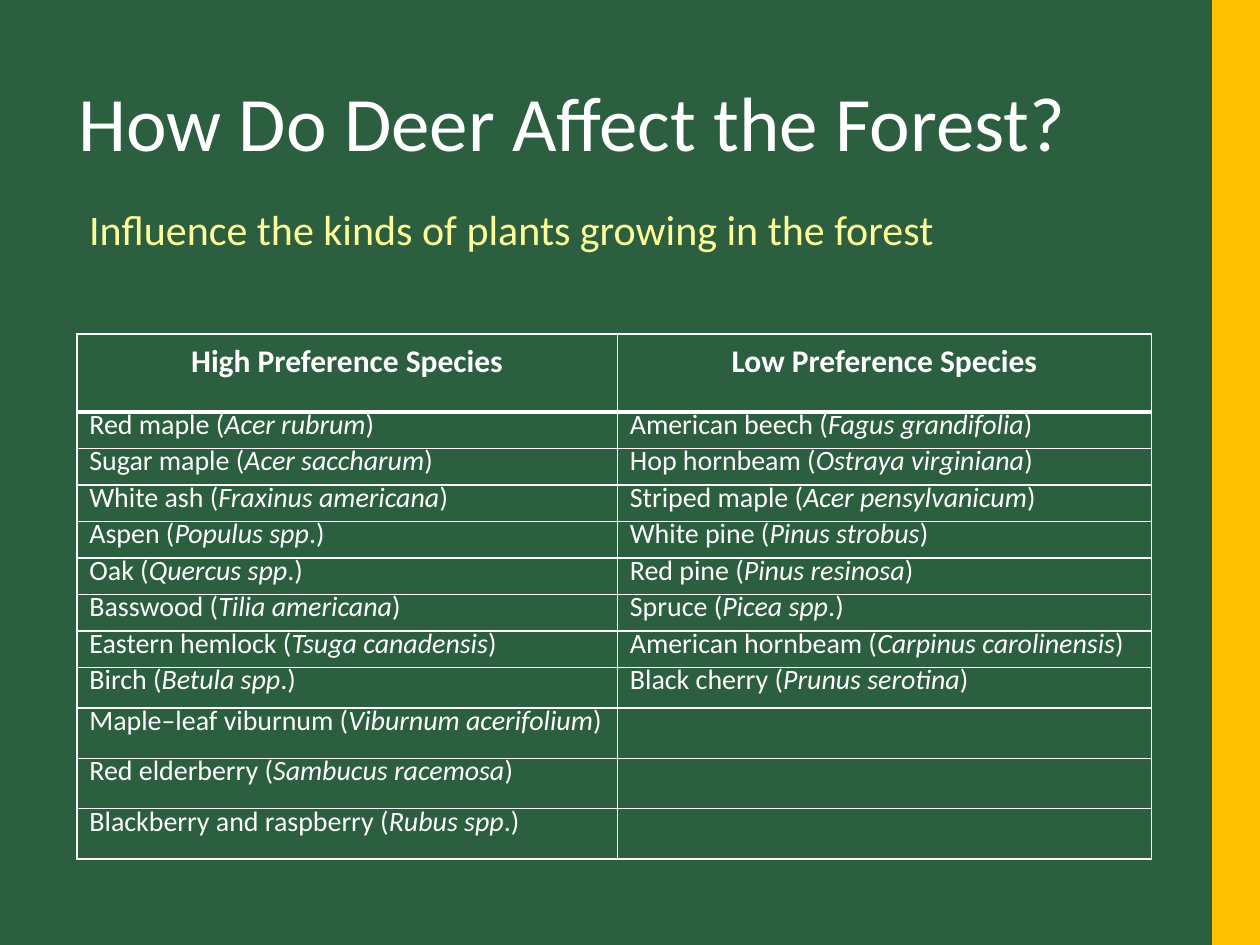
import dataclasses

import pptx
import pptx.dml.color
import pptx.enum.shapes
import pptx.enum.text
import pptx.oxml
import pptx.oxml.ns
import pptx.util

Inches = pptx.util.Inches
Pt = pptx.util.Pt
Align = pptx.enum.text.PP_ALIGN
Anchor = pptx.enum.text.MSO_ANCHOR


@dataclasses.dataclass(frozen=True)
class Theme:
    font: str = "Calibri"
    forest: str = "2C5E40"
    gold: str = "FFC000"
    white: str = "FFFFFF"
    pale_yellow: str = "FFFF99"
    title_size: float = 44
    subtitle_size: float = 24
    header_size: float = 18
    body_size: float = 16
    row_leading: float = 13.5
    thin_line: float = 1
    thick_line: float = 3


HEADERS = ("High Preference Species", "Low Preference Species")
# Asterisks enclose the italic scientific names
HIGH_PREFERENCE = (
    "Red maple (*Acer rubrum*)",
    "Sugar maple (*Acer saccharum*)",
    "White ash (*Fraxinus americana*)",
    "Aspen (*Populus spp*.)",
    "Oak (*Quercus spp*.)",
    "Basswood (*Tilia americana*)",
    "Eastern hemlock (*Tsuga canadensis*)",
    "Birch (*Betula spp*.)",
    "Maple–leaf viburnum (*Viburnum acerifolium*)",
    "Red elderberry (*Sambucus racemosa*)",
    "Blackberry and raspberry (*Rubus spp*.)",
)
LOW_PREFERENCE = (
    "American beech (*Fagus grandifolia*)",
    "Hop hornbeam (*Ostraya virginiana*)",
    "Striped maple (*Acer pensylvanicum*)",
    "White pine (*Pinus strobus*)",
    "Red pine (*Pinus resinosa*)",
    "Spruce (*Picea spp*.)",
    "American hornbeam (*Carpinus carolinensis*)",
    "Black cherry (*Prunus serotina*)",
    "",
    "",
    "",
)
COLUMN_WIDTHS = (4.29, 4.24)
ROW_HEIGHTS = (0.62, *[0.29] * 7, 0.32, 0.36, 0.35, 0.29)


def rgb(color):
    return pptx.dml.color.RGBColor.from_string(color)


def write_text(frame, text, *, font, size, color, bold=False,
               align=Align.LEFT, spacing=None):
    """Write one paragraph; parts between asterisks become italic."""
    para = frame.paragraphs[0]
    para.alignment = align
    if spacing is not None:
        para.line_spacing = spacing
    for index, part in enumerate(text.split("*") if text else ()):
        span = para.add_run()
        span.text = part
        span.font.name = font
        span.font.size = Pt(size)
        span.font.color.rgb = rgb(color)
        span.font.bold = bold
        span.font.italic = index % 2 == 1


def set_border(cell, side, color, width):
    """Draw one side (L, R, T or B) of a cell."""
    cell._tc.get_or_add_tcPr().append(pptx.oxml.parse_xml(
        f'<a:ln{side} {pptx.oxml.ns.nsdecls("a")} w="{Pt(width)}">'
        f'<a:solidFill><a:srgbClr val="{color}"/></a:solidFill></a:ln{side}>'))


class SlideBuilder:
    def __init__(self, deck, theme):
        self.theme = theme
        self.page = deck.slides.add_slide(deck.slide_layouts[5])

    def background(self, color):
        fill = self.page.background.fill
        fill.solid()
        fill.fore_color.rgb = rgb(color)

    def bar(self, left, top, width, height, color):
        box = self.page.shapes.add_shape(
            pptx.enum.shapes.MSO_SHAPE.RECTANGLE,
            Inches(left), Inches(top), Inches(width), Inches(height))
        box.shadow.inherit = False
        box.fill.solid()
        box.fill.fore_color.rgb = rgb(color)
        box.line.fill.background()

    def title(self, text, left, top, width, height):
        box = self.page.shapes.title
        box.left, box.top = Inches(left), Inches(top)
        box.width, box.height = Inches(width), Inches(height)
        box.text_frame.vertical_anchor = Anchor.MIDDLE
        write_text(box.text_frame, text, font=self.theme.font,
                   size=self.theme.title_size, color=self.theme.white, spacing=0.9)

    def subtitle(self, text, left, top, width, height):
        box = self.page.shapes.add_textbox(
            Inches(left), Inches(top), Inches(width), Inches(height))
        box.text_frame.word_wrap = False
        box.text_frame.auto_size = pptx.enum.text.MSO_AUTO_SIZE.SHAPE_TO_FIT_TEXT
        write_text(box.text_frame, text, font=self.theme.font,
                   size=self.theme.subtitle_size, color=self.theme.pale_yellow)

    def table(self, rows, left, top, widths, heights):
        table = self.page.shapes.add_table(
            len(rows), len(widths), Inches(left), Inches(top),
            Inches(sum(widths)), Inches(sum(heights))).table
        table.first_row = table.horz_banding = False
        for column, width in zip(table.columns, widths):
            column.width = Inches(width)
        for index, (row, height, texts) in enumerate(zip(table.rows, heights, rows)):
            row.height = Inches(height)
            for cell, text in zip(row.cells, texts):
                self.cell(cell, text, index)

    def cell(self, cell, text, row_index):
        theme = self.theme
        header = row_index == 0
        # The heavy rule lies between the header and the first species row
        thick_side = {0: "B", 1: "T"}.get(row_index)
        for side in "LRTB":
            width = theme.thick_line if side == thick_side else theme.thin_line
            set_border(cell, side, theme.white, width)
        cell.fill.background()
        if header:
            cell.margin_left = cell.margin_right = Inches(0.07)
            cell.margin_top, cell.margin_bottom = Pt(theme.row_leading), 0
        write_text(cell.text_frame, text, font=theme.font, color=theme.white,
                   size=theme.header_size if header else theme.body_size,
                   bold=header, align=Align.CENTER if header else Align.LEFT,
                   spacing=Pt(theme.row_leading))


def main():
    deck = pptx.Presentation()
    deck.slide_width, deck.slide_height = Inches(10), Inches(7.5)
    theme = Theme()
    builder = SlideBuilder(deck, theme)

    # Backdrop
    builder.background(theme.forest)
    builder.bar(9.62, 0, 0.38, 7.5, theme.gold)

    # Headings
    builder.title("How Do Deer Affect the Forest?", 0.52, 0.28, 8.62, 1.45)
    builder.subtitle("Influence the kinds of plants growing in the forest",
                     0.61, 1.57, 6.97, 0.5)

    # Species table
    rows = [HEADERS, *zip(HIGH_PREFERENCE, LOW_PREFERENCE)]
    builder.table(rows, 0.61, 2.65, COLUMN_WIDTHS, ROW_HEIGHTS)

    deck.save("out.pptx")


if __name__ == "__main__":
    main()
